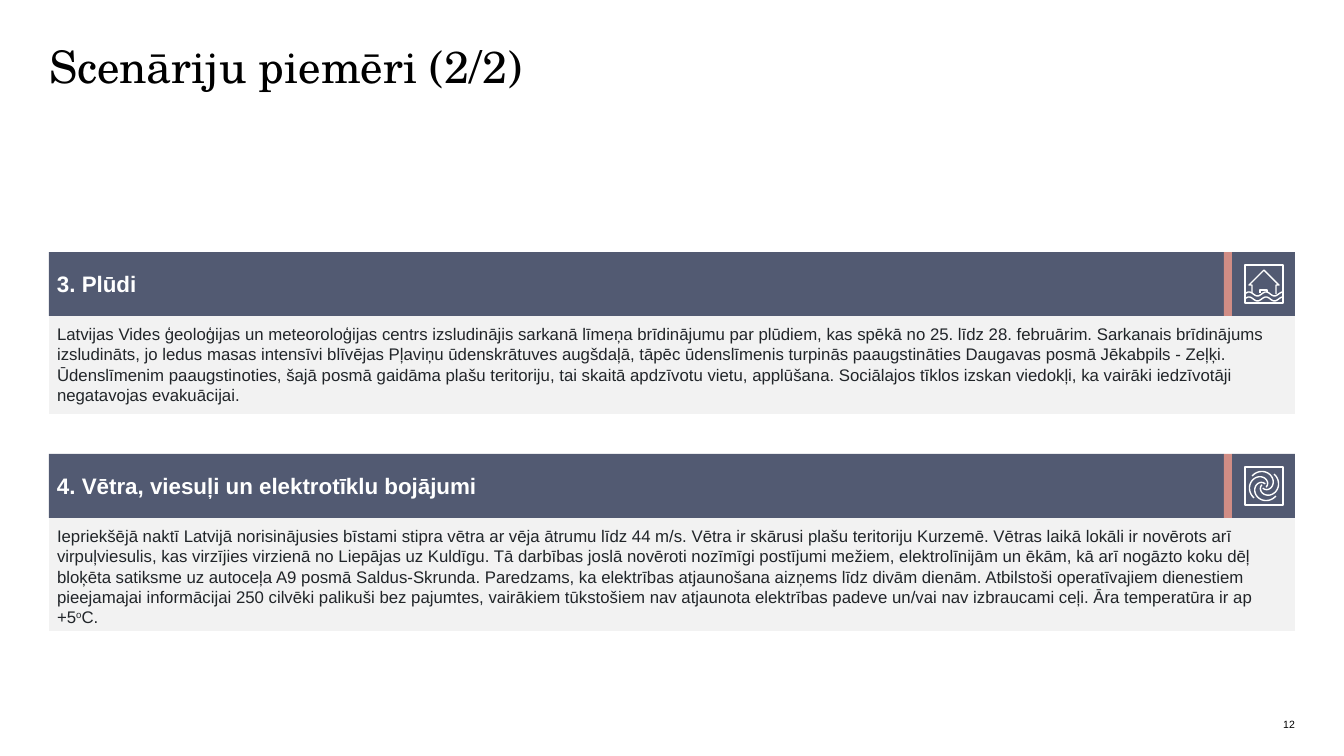
import math
import pptx
import pptx.util
import pptx.dml.color
import pptx.enum.shapes
import pptx.enum.text

PX = 914400 / 100.8
SLATE, ROSE, PALE, INK, WHITE, BLACK = "525A72", "D18D85", "F2F2F2", "212529", "FFFFFF", "000000"
ANCHOR = pptx.enum.text.MSO_ANCHOR
ALIGN = pptx.enum.text.PP_ALIGN

deck = pptx.Presentation()
deck.slide_width = pptx.util.Inches(13.333)
deck.slide_height = pptx.util.Inches(7.5)
page = deck.slides.add_slide(deck.slide_layouts[6])


def color(code):
    return pptx.dml.color.RGBColor.from_string(code)


def add_box(left, top, width, height, fill=None, text="", size=12, ink=BLACK,
            font="Arial", bold=False, inset=0, anchor=ANCHOR.TOP, align=ALIGN.LEFT):
    """Add a rectangle, or a text box when there is no fill; return its paragraph."""
    place = [round(value * PX) for value in (left, top, width, height)]
    if fill:
        box = page.shapes.add_shape(pptx.enum.shapes.MSO_SHAPE.RECTANGLE, *place)
        box.shadow.inherit = False
        box.fill.solid()
        box.fill.fore_color.rgb = color(fill)
        box.line.fill.background()
    else:
        box = page.shapes.add_textbox(*place)
    frame = box.text_frame
    frame.word_wrap = True
    frame.vertical_anchor = anchor
    frame.margin_left = frame.margin_right = round(inset * PX)
    frame.margin_top = frame.margin_bottom = round(inset * PX)
    para = frame.paragraphs[0]
    para.alignment = align
    para.font.name, para.font.size, para.font.bold = font, pptx.util.Pt(size), bold
    para.font.color.rgb = color(ink)
    if text:
        para.add_run().text = text
    return para


# Title and page number
title = add_box(49, 47, 1246, 153, text="Scenāriju piemēri (2/2)", size=32, font="TeX Gyre Schola")
title.line_spacing = 0.85
add_box(1101, 716, 194, 15, text="12", size=7.5, anchor=ANCHOR.BOTTOM, align=ALIGN.RIGHT)

# Icon strokes, in px from the icon's corner
frame_line = [(1, 1), (39, 1), (39, 39), (1, 39), (1, 1)]
house = [(8, 29), (8, 21), (5, 21), (20, 6), (35, 21), (32, 21), (32, 30)]
door = [(16, 29), (16, 26), (23, 26), (23, 28)]
waves = [[(x, level - 2 * math.cos(math.tau * (x - 5) / 17)) for x in range(1, 40)]
         for level in (30, 35)]
spiral_arms = []
for quarter in range(4):
    arm = []
    for step in range(41):
        radius = 9 + 6.5 * math.cos(math.pi * step / 40)
        angle = math.radians(220 + 90 * quarter + 260 * step / 40)
        arm.append((20 + radius * math.cos(angle), 20 + radius * math.sin(angle)))
    spiral_arms.append(arm)

# Scenarios: top, body height, heading, body runs, icon strokes
scenarios = [
    (252, 98, "3. Plūdi",
     ["Latvijas Vides ģeoloģijas un meteoroloģijas centrs izsludinājis sarkanā līmeņa "
      "brīdinājumu par plūdiem, kas spēkā no 25. līdz 28. februārim. Sarkanais brīdinājums "
      "izsludināts, jo ledus masas intensīvi blīvējas Pļaviņu ūdenskrātuves augšdaļā, tāpēc "
      "ūdenslīmenis turpinās paaugstināties Daugavas posmā Jēkabpils - Zeļķi. Ūdenslīmenim "
      "paaugstinoties, šajā posmā gaidāma plašu teritoriju, tai skaitā apdzīvotu vietu, "
      "applūšana. Sociālajos tīklos izskan viedokļi, ka vairāki iedzīvotāji negatavojas "
      "evakuācijai."],
     [house, door, *waves]),
    (454, 113, "4. Vētra, viesuļi un elektrotīklu bojājumi",
     ["Iepriekšējā naktī Latvijā norisinājusies bīstami stipra vētra ar vēja ātrumu līdz "
      "44 m/s. Vētra ir skārusi plašu teritoriju Kurzemē. Vētras laikā lokāli ir novērots arī "
      "virpuļviesulis, kas virzījies virzienā no Liepājas uz Kuldīgu. Tā darbības joslā "
      "novēroti nozīmīgi postījumi mežiem, elektrolīnijām un ēkām, kā arī nogāzto koku dēļ "
      "bloķēta satiksme uz autoceļa A9 posmā Saldus-Skrunda. Paredzams, ka elektrības "
      "atjaunošana aizņems līdz divām dienām. Atbilstoši operatīvajiem dienestiem pieejamajai "
      "informācijai 250 cilvēki palikuši bez pajumtes, vairākiem tūkstošiem nav atjaunota "
      "elektrības padeve un/vai nav izbraucami ceļi. Āra temperatūra ir ap +5", "o", "C."],
     spiral_arms),
]

for top, body_height, heading, runs, strokes in scenarios:
    # Body text, with the degree sign raised
    body = add_box(49, top + 64, 1246, body_height, PALE, ink=INK, inset=8)
    body.space_after = pptx.util.Pt(6)
    for text in runs:
        span = body.add_run()
        span.text = text
        if text == "o":
            span.font._element.set("baseline", "30000")

    # Heading bar, icon tile and accent
    add_box(49, top, 1175, 64, SLATE, heading, 16, WHITE, bold=True, inset=8, anchor=ANCHOR.MIDDLE)
    add_box(1232, top, 63, 64, SLATE)
    add_box(1224, top, 8, 64, ROSE)

    # Icon
    for stroke in [frame_line, *strokes]:
        points = [((1244 + x) * PX, (top + 12 + y) * PX) for x, y in stroke]
        builder = page.shapes.build_freeform(*points[0])
        builder.add_line_segments(points[1:], close=stroke is frame_line)
        outline = builder.convert_to_shape()
        outline.shadow.inherit = False
        outline.fill.background()
        outline.line.color.rgb = color(WHITE)
        outline.line.width = pptx.util.Pt(1.25 if stroke is frame_line else 1)

deck.save("out.pptx")
